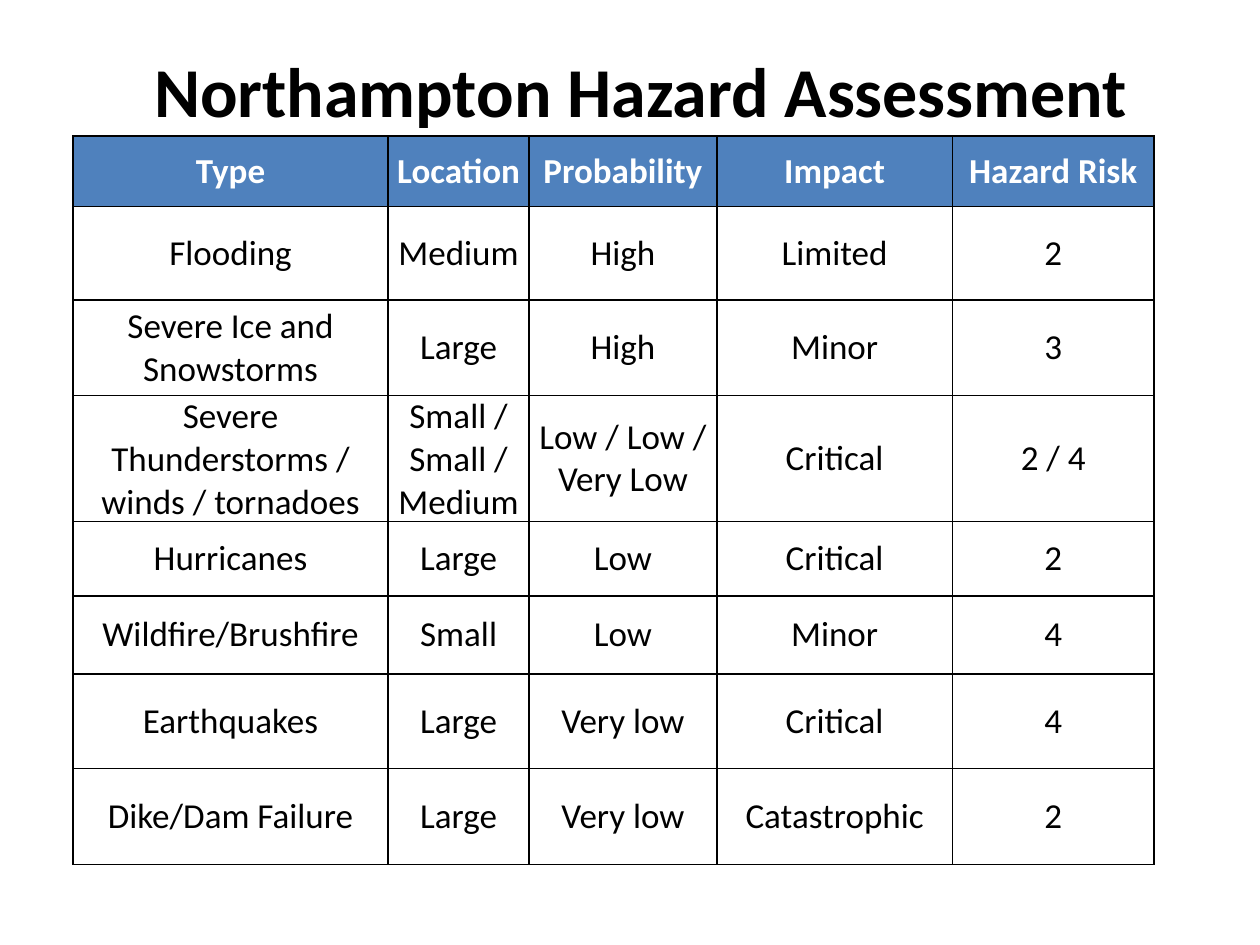
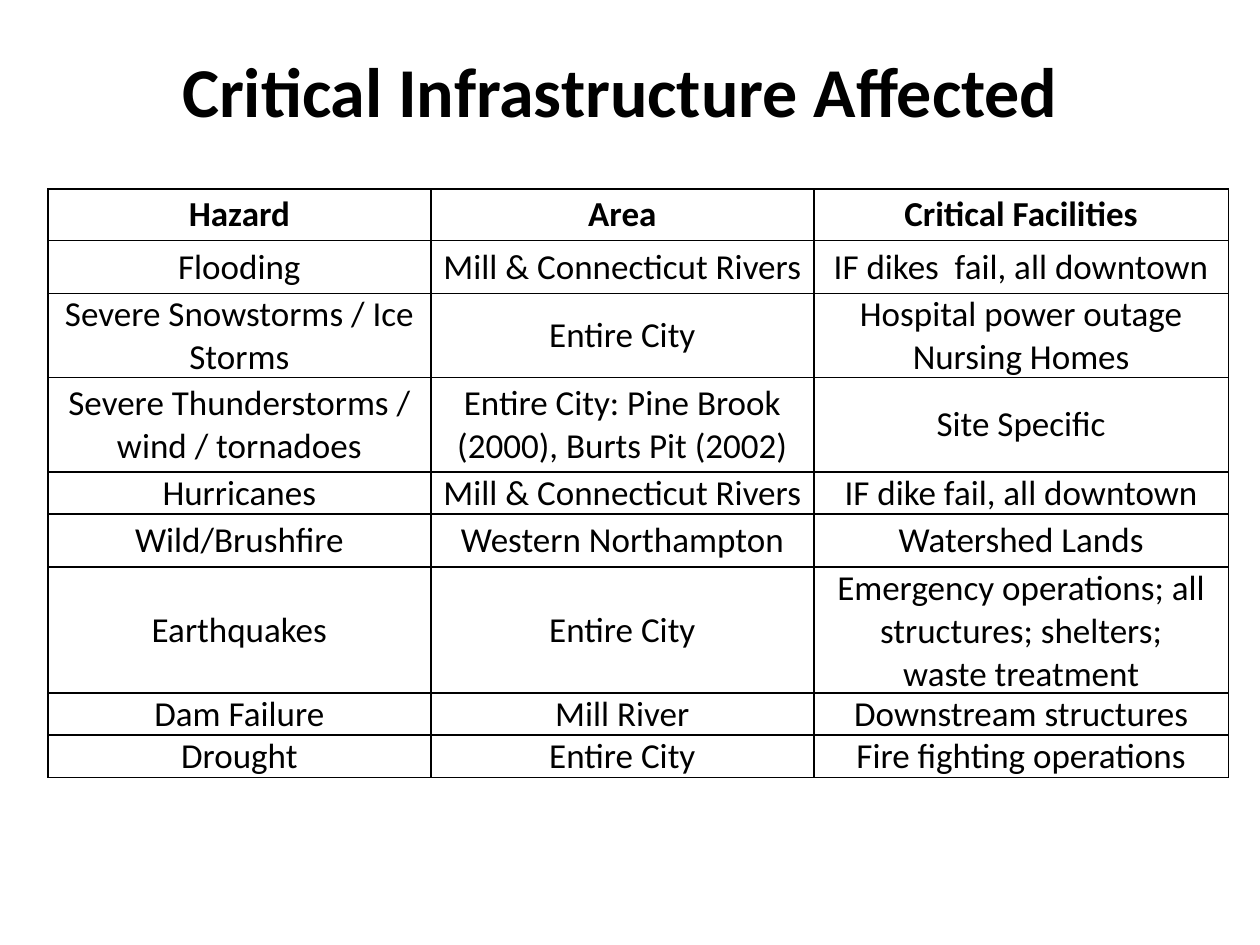
"""Build two slides of hazard tables for Northampton."""
from lxml import etree
from pptx import Presentation
from pptx import util as u
from pptx.dml.color import RGBColor
from pptx.enum import text
from pptx.oxml import ns

BLACK = RGBColor(0, 0, 0)
WHITE = RGBColor(255, 255, 255)
BLUE = RGBColor(0x4F, 0x81, 0xBD)
FONT = "Calibri"
WIDE, HIGH = 10, 7.5

PAGES = [
    {
        "title": "Northampton Hazard Assessment",
        "span": (0.67, 8.83),
        "spot": (0.58, 1.08),
        "cols": [2.5, 1.12, 1.49, 1.87, 1.6],
        "rows": [0.56, 0.74, 0.76, 0.96, 0.59, 0.62, 0.75, 0.76],
        "pad": 0.06,
        "head": (WHITE, BLUE),
        "cells": [
            ("Type", "Location", "Probability", "Impact", "Hazard Risk"),
            ("Flooding", "Medium", "High", "Limited", "2"),
            ("Severe Ice and Snowstorms", "Large", "High", "Minor", "3"),
            ("Severe Thunderstorms / winds / tornadoes", "Small / Small / Medium",
             "Low / Low / Very Low", "Critical", "2 / 4"),
            ("Hurricanes", "Large", "Low", "Critical", "2"),
            ("Wildfire/Brushfire", "Small", "Low", "Minor", "4"),
            ("Earthquakes", "Large", "Very low", "Critical", "4"),
            ("Dike/Dam Failure", "Large", "Very low", "Catastrophic", "2"),
        ],
    },
    {
        "title": "Critical Infrastructure Affected",
        "span": (0.42, 9),
        "spot": (0.38, 1.5),
        "cols": [3.04, 3.04, 3.29],
        "rows": [0.41, 0.42, 0.65, 0.75, 0.33, 0.42, 0.87, 0.24, 0.24],
        "pad": 0.04,
        "head": (BLACK, None),
        "cells": [
            ("Hazard", "Area", "Critical Facilities"),
            ("Flooding", "Mill & Connecticut Rivers", "IF dikes  fail, all downtown"),
            ("Severe Snowstorms / Ice Storms", "Entire City",
             "Hospital power outage\nNursing Homes"),
            ("Severe Thunderstorms / wind / tornadoes",
             "Entire City: Pine Brook (2000), Burts Pit (2002)", "Site Specific"),
            ("Hurricanes", "Mill & Connecticut Rivers", "IF dike fail, all downtown"),
            ("Wild/Brushfire", "Western Northampton", "Watershed Lands"),
            ("Earthquakes", "Entire City",
             "Emergency operations; all structures; shelters;\nwaste treatment"),
            ("Dam Failure", "Mill River", "Downstream structures"),
            ("Drought", "Entire City", "Fire fighting operations"),
        ],
    },
]


def write(frame, words, size, ink, bold):
    for n, line in enumerate(words.split("\n")):
        para = frame.add_paragraph() if n else frame.paragraphs[0]
        para.alignment = text.PP_ALIGN.CENTER
        run = para.add_run()
        run.text = line
        font = run.font
        font.name, font.size, font.bold = FONT, u.Pt(size), bold
        font.color.rgb = ink


def edge(cell):
    props = cell._tc.get_or_add_tcPr()
    for side in ("lnL", "lnR", "lnT", "lnB"):
        line = etree.SubElement(props, ns.qn(f"a:{side}"), w=str(u.Pt(1)))
        fill = etree.SubElement(line, ns.qn("a:solidFill"))
        etree.SubElement(fill, ns.qn("a:srgbClr"), val=str(BLACK))


def style(cell, pad, back):
    edge(cell)
    cell.margin_left = cell.margin_right = u.Inches(pad)
    cell.margin_top = cell.margin_bottom = 0
    cell.vertical_anchor = text.MSO_ANCHOR.MIDDLE
    if back is None:
        cell.fill.background()
    else:
        cell.fill.solid()
        cell.fill.fore_color.rgb = back


def add_title(slide, page):
    left, width = page["span"]
    box = slide.shapes.add_textbox(*map(u.Inches, (left, 0.33, width, 0.92)))
    box.text_frame.word_wrap = True
    write(box.text_frame, page["title"], 40, BLACK, True)


def add_grid(slide, page):
    cols, rows = page["cols"], page["rows"]
    area = map(u.Inches, (*page["spot"], sum(cols), sum(rows)))
    grid = slide.shapes.add_table(len(rows), len(cols), *area).table
    grid.first_row = grid.horz_banding = False
    for col, width in zip(grid.columns, cols):
        col.width = u.Inches(width)
    for r, (row, height) in enumerate(zip(grid.rows, rows)):
        row.height = u.Inches(height)
        ink, back = (BLACK, None) if r else page["head"]
        for cell, words in zip(row.cells, page["cells"][r]):
            style(cell, page["pad"], back)
            write(cell.text_frame, words, 20, ink, r == 0)


def main():
    deck = Presentation()
    deck.slide_width, deck.slide_height = u.Inches(WIDE), u.Inches(HIGH)
    for page in PAGES:
        slide = deck.slides.add_slide(deck.slide_layouts[6])
        add_title(slide, page)
        add_grid(slide, page)
    deck.save("out.pptx")


if __name__ == "__main__":
    main()
